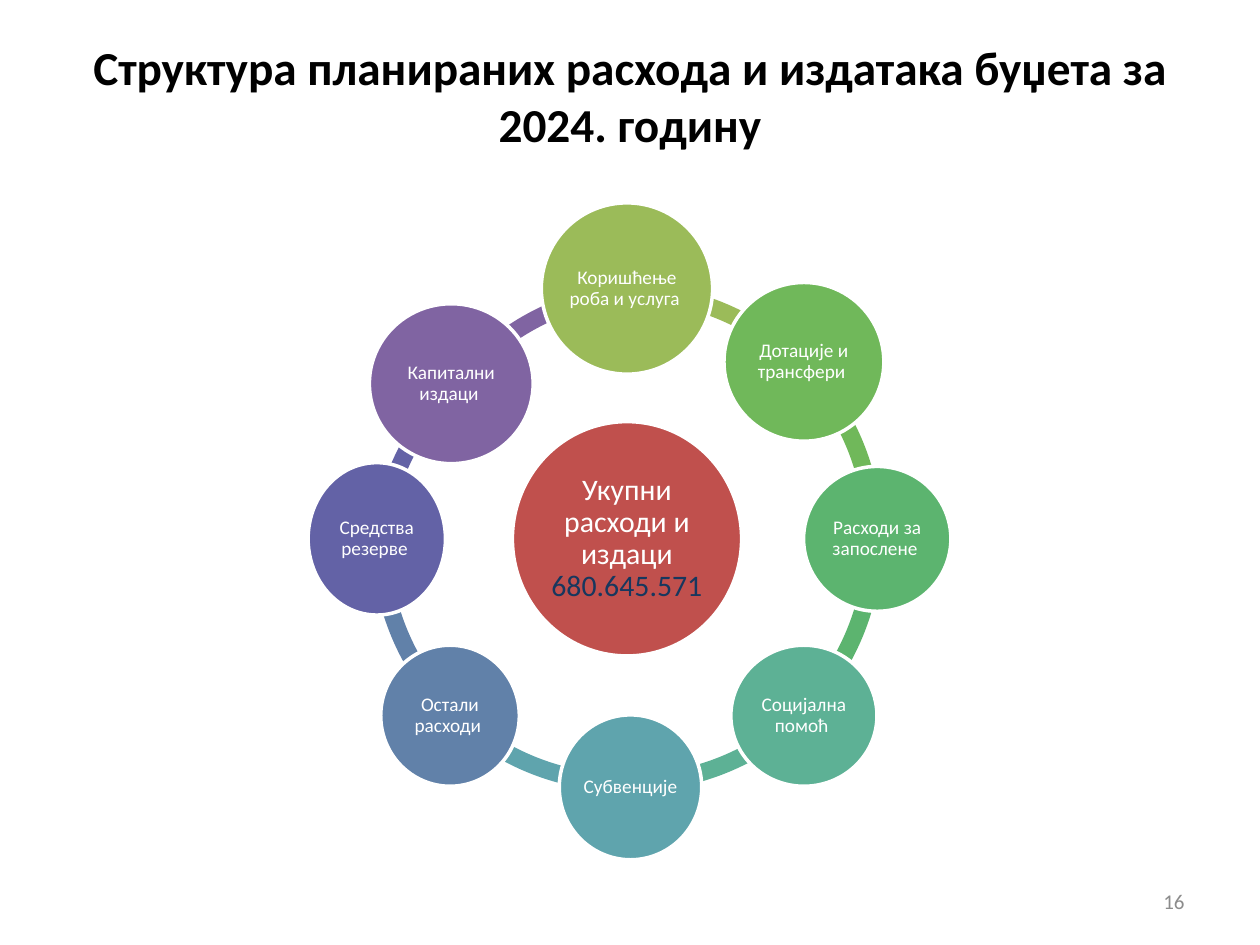
from math import cos, radians, sin

from pptx import Presentation
from pptx.dml.color import RGBColor
from pptx.enum.shapes import MSO_SHAPE as Shape
from pptx.enum.text import MSO_ANCHOR as Anchor, MSO_AUTO_SIZE as AutoSize, PP_ALIGN as Align
from pptx.util import Pt

COLORS = {
    "goods": "9BBB59", "grants": "70B85A", "staff": "5CB46F", "social": "5DB195",
    "subsidies": "5FA4AD", "other": "6181A9", "reserve": "6362A6", "capital": "8064A2",
    "total": "C0504D", "amount": "17375E", "white": "FFFFFF", "black": "000000", "gray": "8C8C8C",
}
TITLE = "Структура планираних расхода и издатака буџета за 2024. годину"
TOTAL = [("Укупни расходи и издаци ", "white"), ("680.645.571", "amount")]
PAGE_NUMBER = "16"
CATEGORIES = [
    ("goods", "Коришћење роба и услуга ", (97.9, 97.9)),
    ("grants", "Дотације и трансфери ", (91.4, 90.7)),
    ("staff", "Расходи за запослене ", (84.2, 82.8)),
    ("social", "Социјална помоћ ", (83.5, 80.6)),
    ("subsidies", "Субвенције ", (81.4, 82.8)),
    ("other", "Остали расходи ", (79.2, 80.6)),
    ("reserve", "Средства резерве ", (78.5, 87.1)),
    ("capital", "Капитални издаци ", (93.6, 91.4)),
]
CIRCLE_SHIFTS = {"subsidies": (2, -1), "capital": (0.7, 12.5)}
ARC_SHIFTS = {"social": (2.2, -1.4), "subsidies": (-1.4, -1.4),
              "reserve": (-0.7, 14.4), "capital": (13, -0.7)}
ARC_ANGLES = {"social": (45.93, 89.8), "subsidies": (88.5, 134.1),
              "reserve": (185.81, 225.94), "capital": (217.83, 264.88)}
CENTER = (358.3, 307.9)
ORBIT, RING, STEP = 143, 291.6, 45
TOTAL_SIZE = (131, 133.9)
ARC_UNIT = 0.6
CIRCLE_FRAME = {"word_wrap": True, "vertical_anchor": Anchor.MIDDLE,
                **{f"margin_{side}": Pt(1.4) for side in ("left", "top", "right", "bottom")}}
PLAIN_FRAME = {"word_wrap": True, "vertical_anchor": Anchor.MIDDLE, "auto_size": AutoSize.NONE}


def color(name):
    """Return the named colour."""
    return RGBColor.from_string(COLORS[name])


def apply(target, values):
    """Set each attribute in values on target."""
    for name, value in values.items():
        setattr(target, name, value)


def write(shape, runs, size, frame, paragraph_format, bold=False):
    """Fill a shape with one formatted paragraph."""
    apply(shape.text_frame, frame)
    paragraph = shape.text_frame.paragraphs[0]
    apply(paragraph, paragraph_format)
    for text, color_name in runs:
        run = paragraph.add_run()
        run.text = text
        apply(run.font, {"name": "Calibri", "size": Pt(size), "bold": bold})
        run.font.color.rgb = color(color_name)


def add_centered(slide, kind, center, size, fill):
    """Add a filled shape around a centre point."""
    left, top = (middle - length / 2 for middle, length in zip(center, size))
    shape = slide.shapes.add_shape(kind, *map(Pt, (left, top, *size)))
    shape.shadow.inherit = False
    shape.fill.solid()
    shape.fill.fore_color.rgb = color(fill)
    shape.line.fill.background()
    return shape


def add_circle(slide, center, size, fill, runs, font_size):
    """Add a white-edged circle with centred text."""
    circle = add_centered(slide, Shape.OVAL, center, size, fill)
    circle.line.color.rgb = color("white")
    circle.line.width = Pt(2)
    write(circle, runs, font_size, CIRCLE_FRAME, {"alignment": Align.CENTER, "line_spacing": 0.9})


def shifted(point, shift):
    """Move a point by a shift."""
    return tuple(a + b for a, b in zip(point, shift))


def main():
    """Build the budget structure slide."""
    presentation = Presentation()
    apply(presentation, {"slide_width": Pt(720), "slide_height": Pt(540)})
    slide = presentation.slides.add_slide(presentation.slide_layouts[5])
    title = slide.shapes.title
    apply(title, {"left": Pt(36), "top": Pt(21), "width": Pt(648), "height": Pt(67)})
    write(title, [(TITLE, "black")], 27, PLAIN_FRAME, {"alignment": Align.CENTER}, bold=True)

    angles = {key: 270 + STEP * index for index, (key, *_) in enumerate(CATEGORIES)}
    for key, *_ in reversed(CATEGORIES):
        center = shifted(CENTER, ARC_SHIFTS.get(key, (0, 0)))
        arc = add_centered(slide, Shape.BLOCK_ARC, center, (RING, RING), key)
        start, end = ARC_ANGLES.get(key, (angles[key], angles[key] + STEP))
        for index, value in enumerate((start % 360 * ARC_UNIT, end % 360 * ARC_UNIT, 0.034)):
            arc.adjustments[index] = value

    add_circle(slide, CENTER, TOTAL_SIZE, "total", TOTAL, 17)
    for key, label, size in CATEGORIES:
        angle = radians(angles[key])
        center = shifted(CENTER, (ORBIT * cos(angle), ORBIT * sin(angle)))
        center = shifted(center, CIRCLE_SHIFTS.get(key, (0, 0)))
        add_circle(slide, center, size, key, [(label, "white")], 11)

    page_number = slide.shapes.add_textbox(*map(Pt, (516, 500.5, 168, 28.8)))
    write(page_number, [(PAGE_NUMBER, "gray")], 12, PLAIN_FRAME, {"alignment": Align.RIGHT})
    presentation.save("out.pptx")


if __name__ == "__main__":
    main()
